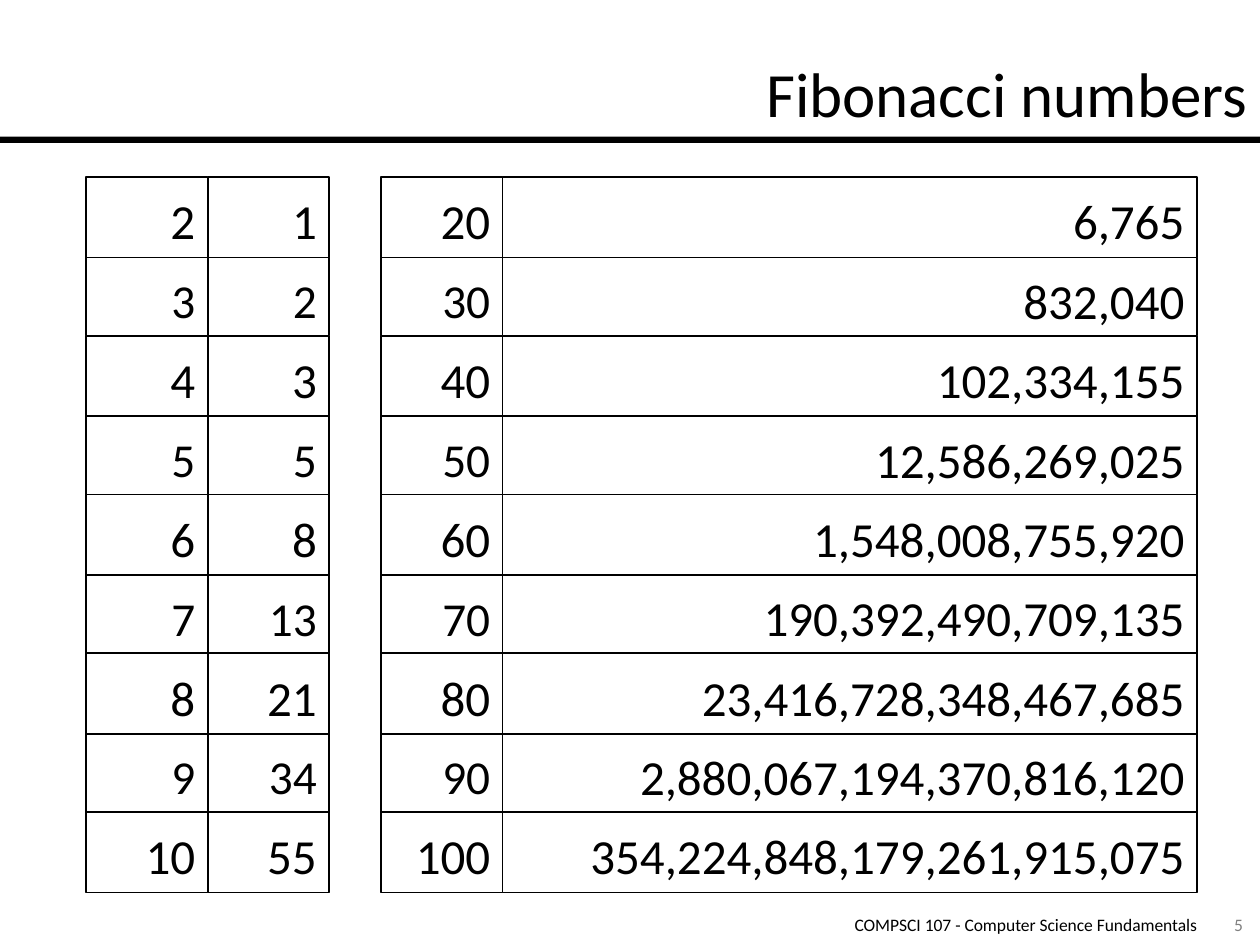
from pptx import Presentation
from pptx.dml.color import RGBColor
from pptx.enum.shapes import MSO_SHAPE
from pptx.enum.text import MSO_ANCHOR, PP_ALIGN
from pptx.util import Inches, Pt

RECTANGLE = MSO_SHAPE.RECTANGLE
MIDDLE, BOTTOM = MSO_ANCHOR.MIDDLE, MSO_ANCHOR.BOTTOM
RIGHT, CENTER = PP_ALIGN.RIGHT, PP_ALIGN.CENTER

FONT = "Calibri"
COLORS = {"ink": "000000", "paper": "FFFFFF", "muted": "808080"}
SLIDE_WIDTH, SLIDE_HEIGHT = Inches(10), Inches(7.5)

GRID_TOP = 18.72
ROW_HEIGHTS = (8.53, 8.27)
ROW_SIZES = (28, 27)
INDEX_WIDTH = 9.65
LARGE_VALUE_WIDTH = 55.1


def place(left, top, width, height):
    return (
        round(SLIDE_WIDTH * left / 100),
        round(SLIDE_HEIGHT * top / 100),
        round(SLIDE_WIDTH * width / 100),
        round(SLIDE_HEIGHT * height / 100),
    )


def color(name):
    return RGBColor.from_string(COLORS[name])


def fibonacci(index):
    current, following = 0, 1
    for _ in range(index):
        current, following = following, current + following
    return current


def write(text_frame, text, size, align, color_name="ink"):
    text_frame.text = text
    paragraph = text_frame.paragraphs[0]
    paragraph.alignment = align
    font = paragraph.runs[0].font
    font.name = FONT
    font.size = Pt(size)
    font.color.rgb = color(color_name)


def add_label(slide, box, text, size, align, anchor, inset=0, color_name="ink"):
    text_frame = slide.shapes.add_textbox(*place(*box)).text_frame
    text_frame.word_wrap = True
    text_frame.vertical_anchor = anchor
    text_frame.margin_left = text_frame.margin_right = Inches(inset)
    text_frame.margin_top = text_frame.margin_bottom = Inches(inset / 2)
    write(text_frame, text, size, align, color_name)


def add_rectangle(shapes, box, fill_name):
    rectangle = shapes.add_shape(RECTANGLE, *place(*box))
    rectangle.shadow.inherit = False
    rectangle.fill.solid()
    rectangle.fill.fore_color.rgb = color(fill_name)
    return rectangle


def add_cell(group, box, text, size):
    cell = add_rectangle(group.shapes, box, "paper")
    cell.line.color.rgb = color("ink")
    cell.line.width = Pt(1)
    text_frame = cell.text_frame
    text_frame.word_wrap = False
    text_frame.vertical_anchor = MIDDLE
    text_frame.margin_bottom = 0
    write(text_frame, text, size, RIGHT)


def add_fibonacci_grid(slide, left, indices, value_width, value_sizes):
    group = slide.shapes.add_group_shape()
    value_left = left + INDEX_WIDTH
    for row, index in reversed(list(enumerate(indices))):
        parity = row % 2
        height = ROW_HEIGHTS[parity]
        top = GRID_TOP + sum(ROW_HEIGHTS[above % 2] for above in range(row))
        add_cell(group, (value_left, top, value_width, height),
                 f"{fibonacci(index):,}", value_sizes[parity])
        add_cell(group, (left, top, INDEX_WIDTH, height), str(index), ROW_SIZES[parity])


def main():
    presentation = Presentation()
    presentation.slide_width = SLIDE_WIDTH
    presentation.slide_height = SLIDE_HEIGHT
    slide = presentation.slides.add_slide(presentation.slide_layouts[6])

    rule = add_rectangle(slide.shapes, (0, 14.45, 100, 0.67), "ink")
    rule.line.fill.background()
    add_label(slide, (0, 0, 100, 14.4), "Fibonacci numbers", 36, RIGHT, BOTTOM, inset=0.1)
    add_fibonacci_grid(slide, 30.24, range(20, 101, 10), LARGE_VALUE_WIDTH, (28, 28))
    add_fibonacci_grid(slide, 6.83, range(2, 11), INDEX_WIDTH, ROW_SIZES)
    add_label(slide, (96.6, 96.67, 3.4, 2.27), "5", 10, CENTER, MIDDLE, color_name="muted")
    add_label(slide, (48.3, 96.67, 46.7, 2.27),
              "COMPSCI 107 - Computer Science Fundamentals", 10, RIGHT, MIDDLE)

    presentation.save("out.pptx")


if __name__ == "__main__":
    main()
